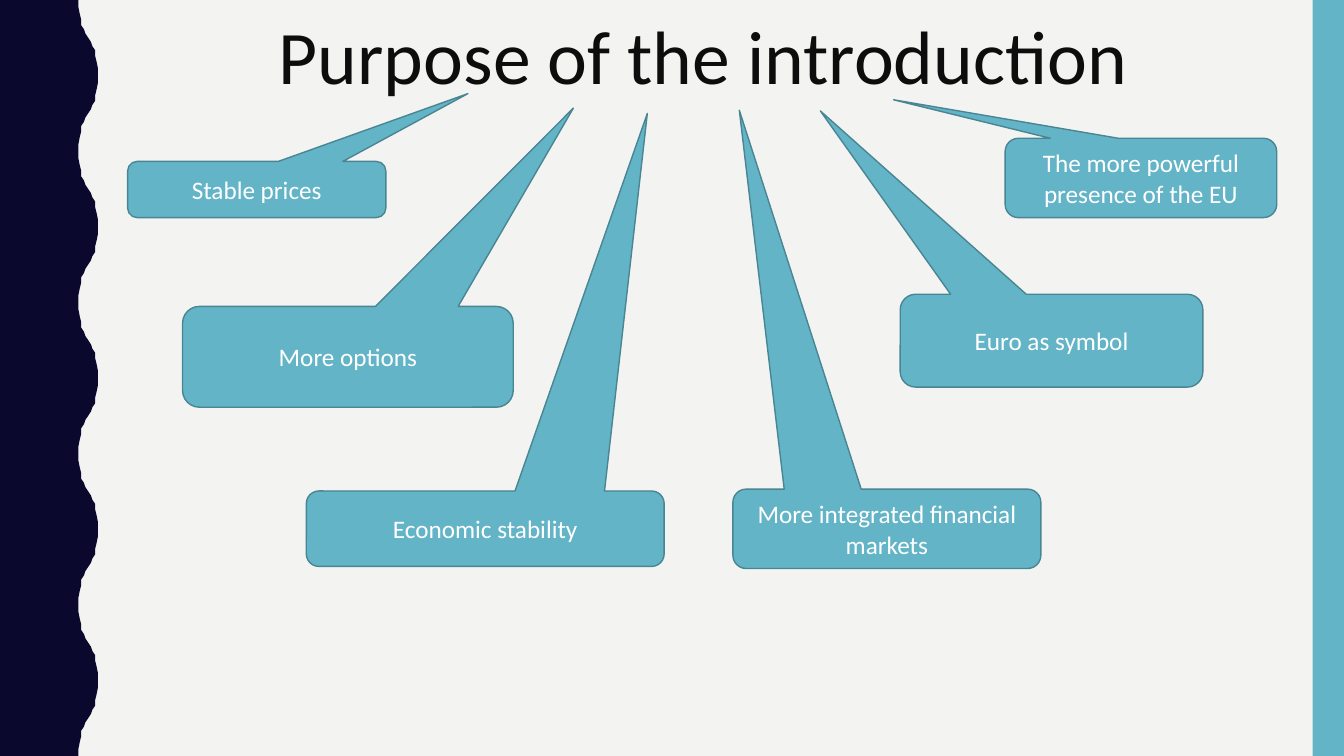
from pptx import Presentation
from pptx.dml.color import RGBColor
from pptx.enum.shapes import MSO_SHAPE
from pptx.enum.text import MSO_ANCHOR, PP_ALIGN
from pptx.util import Pt

RECT = MSO_SHAPE.RECTANGLE
CALLOUT = MSO_SHAPE.ROUNDED_RECTANGULAR_CALLOUT
LEFT, CENTER = PP_ALIGN.LEFT, PP_ALIGN.CENTER
TOP, MIDDLE = MSO_ANCHOR.TOP, MSO_ANCHOR.MIDDLE

WIDTH, HEIGHT = 960, 540
PAPER, NAVY, TEAL, EDGE = "F3F3F2", "0B082E", "62B4C6", "498592"
INK, WHITE = "0D0D0D", "FFFFFF"

# Wave: y and x along the first quarter of a period
PERIOD = 108
MID = 63
QUARTER = [(0, 56.2), (5, 56.4), (10, 56.9), (14.4, 57.6),
           (18, 58.5), (21, 59.7), (24, 61.2), (27, 62.8)]

# Text, left, top, width, height, tip offset from centre as share of size
REASONS = [
    ("Stable prices", 91.2, 115.3, 184.4, 40.1, 0.818, -1.708),
    ("More options", 130.4, 218.9, 236.2, 72, 0.682, -2.468),
    ("Economic stability", 218.8, 350.7, 255.6, 53.9, 0.453, -5.505),
    ("More integrated financial markets",
     523.5, 349.4, 220, 56.7, -0.479, -5.273),
    ("The more powerful presence of the EU",
     718, 98.8, 194, 56.7, -0.911, -0.985),
    ("Euro as symbol", 643, 210.2, 216.2, 66.3, -0.764, -2.476),
]


def color(code):
    return RGBColor.from_string(code)


def paint(shape, fill, line=None):
    shape.shadow.inherit = False
    shape.fill.solid()
    shape.fill.fore_color.rgb = color(fill)
    if line:
        shape.line.color.rgb = color(line)
        shape.line.width = Pt(1)
    else:
        shape.line.fill.background()


def write(shape, text, size=18, ink=WHITE, align=CENTER, anchor=MIDDLE):
    frame = shape.text_frame
    frame.word_wrap = True
    frame.vertical_anchor = anchor
    para = frame.paragraphs[0]
    para.alignment = align
    run = para.add_run()
    run.text = text
    run.font.name = "Calibri"
    run.font.size = Pt(size)
    run.font.color.rgb = color(ink)


def add_wave(slide):
    """Draw the left band with its scalloped right edge."""
    half = QUARTER + [(PERIOD / 2 - y, 2 * MID - x)
                      for y, x in reversed(QUARTER)]
    cycle = half + [(PERIOD - y, x) for y, x in reversed(half[:-1])]
    edge = [(x, top + y) for top in range(0, HEIGHT, PERIOD)
            for y, x in cycle]
    form = slide.shapes.build_freeform(0, 0, scale=Pt(1))
    form.add_line_segments(edge + [(0, HEIGHT)], close=True)
    paint(form.convert_to_shape(), NAVY)


def add_bar(slide):
    bar = slide.shapes.add_shape(RECT, Pt(937.6), 0, Pt(22.4), Pt(HEIGHT))
    paint(bar, TEAL)


def add_title(slide, text):
    box = slide.shapes.add_textbox(Pt(192.2), Pt(3), Pt(639.4), Pt(72.7))
    write(box, text, size=54, ink=INK, align=LEFT, anchor=TOP)


def add_callout(slide, text, left, top, width, height, tip_x, tip_y):
    shape = slide.shapes.add_shape(CALLOUT, Pt(left), Pt(top),
                                   Pt(width), Pt(height))
    shape.adjustments[0] = tip_x
    shape.adjustments[1] = tip_y
    paint(shape, TEAL, EDGE)
    write(shape, text)


def main():
    deck = Presentation()
    deck.slide_width, deck.slide_height = Pt(WIDTH), Pt(HEIGHT)
    slide = deck.slides.add_slide(deck.slide_layouts[6])
    slide.background.fill.solid()
    slide.background.fill.fore_color.rgb = color(PAPER)
    add_wave(slide)
    add_bar(slide)
    add_title(slide, "Purpose of the introduction")
    for reason in REASONS:
        add_callout(slide, *reason)
    deck.save("out.pptx")


if __name__ == "__main__":
    main()
